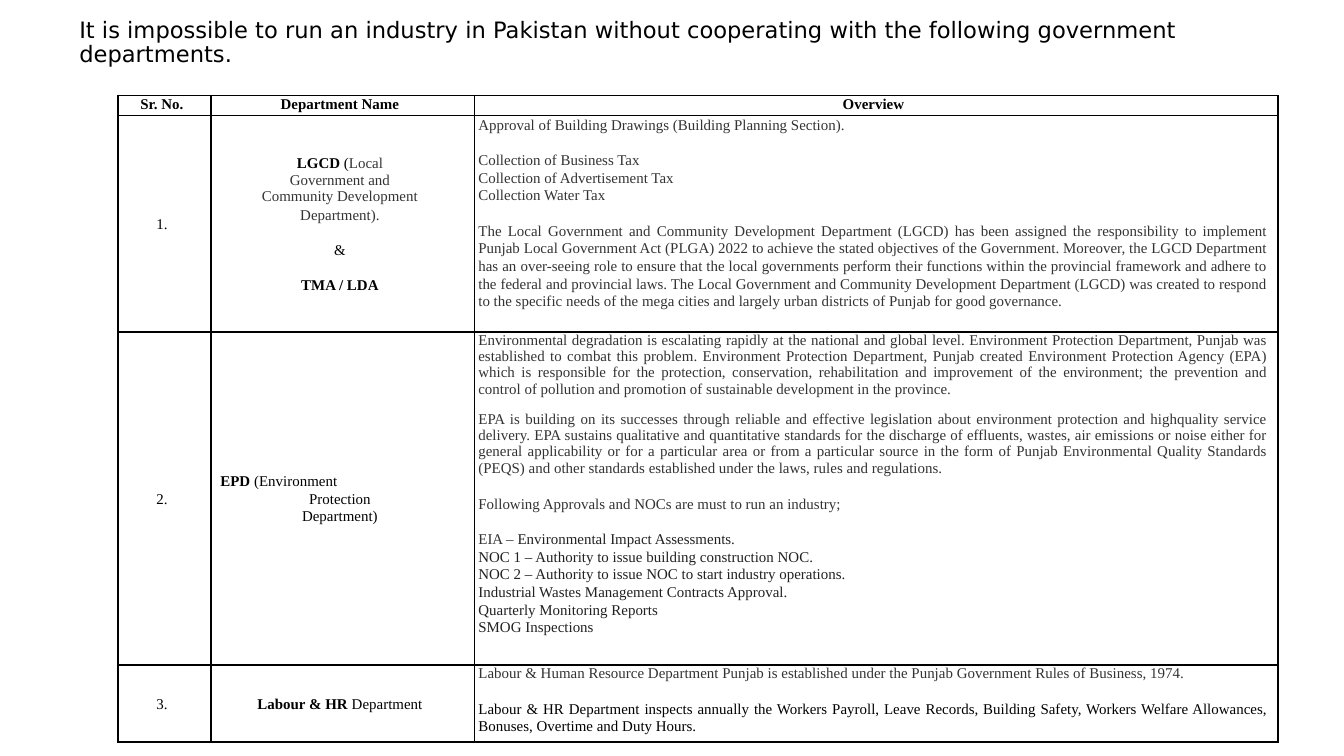
from lxml import etree
from pptx import Presentation
from pptx.dml.color import RGBColor
from pptx.enum.text import MSO_ANCHOR, PP_ALIGN
from pptx.oxml.ns import qn
from pptx.util import Inches, Pt

TOP, MIDDLE = MSO_ANCHOR.TOP, MSO_ANCHOR.MIDDLE
LEFT, CENTER, JUSTIFY = PP_ALIGN.LEFT, PP_ALIGN.CENTER, PP_ALIGN.JUSTIFY
COLORS = {"black": "000000", "white": "FFFFFF", "gray": "333333", "ink": "202124"}
BODY_FONT, BODY_SIZE = "Times New Roman", 8
LINE = 9.5


def para(text, color="black", bold=False, align=CENTER, **spacing):
    runs = [(text, color, bold)] if isinstance(text, str) else text
    return runs, {"alignment": align, "line_spacing": 1.07, **spacing}


def add_border(cell, side):
    line = etree.SubElement(cell._tc.get_or_add_tcPr(), qn(f"a:{side}"), w=str(Pt(1)))
    fill = etree.SubElement(line, qn("a:solidFill"))
    etree.SubElement(fill, qn("a:srgbClr"), val=COLORS["black"])


header = [[para(label, bold=True)] for label in ("Sr. No.", "Department Name", "Overview")]

local_government = [
    [para("1.")],
    [
        para([("LGCD", "black", True), (" (", "black", False), ("Local", "gray", False)]),
        para("Government and", "gray"),
        para("Community Development", "gray", line_spacing=0.98, space_after=Pt(0.2)),
        para("Department).", "gray"),
        para("&", space_before=Pt(LINE)),
        para("TMA / LDA", bold=True, space_before=Pt(LINE)),
    ],
    [
        para("Approval of Building Drawings (Building Planning Section).", "gray", align=LEFT),
        para("Collection of Business Tax", "gray", align=LEFT, space_before=Pt(LINE)),
        para("Collection of Advertisement Tax", "gray", align=LEFT),
        para("Collection Water Tax", "gray", align=LEFT),
        para("The Local Government and Community Development Department (LGCD) has been assigned "
             "the responsibility to implement Punjab Local Government Act (PLGA) 2022 to achieve "
             "the stated objectives of the Government. Moreover, the LGCD Department has an "
             "over-seeing role to ensure that the local governments perform their functions within "
             "the provincial framework and adhere to the federal and provincial laws. The Local "
             "Government and Community Development Department (LGCD) was created to respond to the "
             "specific needs of the mega cities and largely urban districts of Punjab for good "
             "governance.", "gray", align=JUSTIFY, space_before=Pt(LINE)),
    ],
]

environment = [
    [para("2.")],
    [
        para([("EPD", "black", True), (" (Environment", "black", False)], align=LEFT,
             indent=Inches(0.04)),
        para("Protection"),
        para("Department)"),
    ],
    [
        para("Environmental degradation is escalating rapidly at the national and global level. "
             "Environment Protection Department, Punjab was established to combat this problem. "
             "Environment Protection Department, Punjab created Environment Protection Agency "
             "(EPA) which is responsible for the protection, conservation, rehabilitation and "
             "improvement of the environment; the prevention and control of pollution and "
             "promotion of sustainable development in the province.",
             "gray", align=JUSTIFY, line_spacing=0.99, space_after=Pt(7.2)),
        para("EPA is building on its successes through reliable and effective legislation about "
             "environment protection and highquality service delivery. EPA sustains qualitative "
             "and quantitative standards for the discharge of effluents, wastes, air emissions or "
             "noise either for general applicability or for a particular area or from a particular "
             "source in the form of Punjab Environmental Quality Standards (PEQS) and other "
             "standards established under the laws, rules and regulations.",
             "gray", align=JUSTIFY, line_spacing=0.99, space_after=Pt(0.1)),
        para("Following Approvals and NOCs are must to run an industry;", "gray", align=LEFT,
             space_before=Pt(LINE)),
        para([("EIA – ", "gray", False), ("Environmental Impact Assessments.", "ink", False)],
             align=LEFT, space_before=Pt(LINE)),
        *[para(approval, "ink", align=LEFT) for approval in (
            "NOC 1 – Authority to issue building construction NOC.",
            "NOC 2 – Authority to issue NOC to start industry operations.",
            "Industrial Wastes Management Contracts Approval.",
            "Quarterly Monitoring Reports",
            "SMOG Inspections",
        )],
    ],
]

labour = [
    [para("3.")],
    [para([("Labour & HR", "black", True), (" Department", "black", False)])],
    [
        para("Labour & Human Resource Department Punjab is established under the Punjab Government "
             "Rules of Business, 1974.", "gray", align=JUSTIFY, line_spacing=0.98,
             space_after=Pt(0.2)),
        para("Labour & HR Department inspects annually the Workers Payroll, Leave Records, Building "
             "Safety, Workers Welfare Allowances, Bonuses, Overtime and Duty Hours.",
             align=JUSTIFY, space_before=Pt(LINE)),
    ],
]

prs = Presentation()
prs.slide_width = Inches(10)
prs.slide_height = prs.slide_width * 9 // 16
slide = prs.slides.add_slide(prs.slide_layouts[5])

title = slide.shapes.title
title.left, title.top, title.width, title.height = [Inches(v) for v in (0.49, 0.14, 8.62, 0.87)]
title.text_frame.text = ("It is impossible to run an industry in Pakistan without cooperating "
                         "with the following government departments.")
title.text_frame.vertical_anchor = TOP
title.text_frame.margin_top = 0
heading = title.text_frame.paragraphs[0]
heading.alignment, heading.line_spacing = LEFT, 0.9
heading.font.name, heading.font.size = "DejaVu Sans", Pt(12.1)
heading.font.color.rgb = RGBColor.from_string(COLORS["black"])

departments = slide.shapes.add_table(
    4, 3, Inches(0.88), Inches(0.71), Inches(8.63), Inches(4.81)).table
departments.first_row = departments.horz_banding = False
for column, width in zip(departments.columns, (0.69, 1.96, 5.98)):
    column.width = Inches(width)
for row, height in zip(departments.rows, (0.15, 1.61, 2.48, 0.57)):
    row.height = Inches(height)

cell_format = {"margin_left": Inches(0.03), "margin_right": Inches(0.07),
               "margin_top": 0, "margin_bottom": 0}
for r, row_content in enumerate((header, local_government, environment, labour)):
    for c, paragraphs in enumerate(row_content):
        cell = departments.cell(r, c)
        for name, value in cell_format.items():
            setattr(cell, name, value)
        cell.vertical_anchor = MIDDLE if r > 0 and c < 2 else TOP
        for side in ("lnL", "lnR", "lnT", "lnB"):
            add_border(cell, side)
        cell.fill.solid()
        cell.fill.fore_color.rgb = RGBColor.from_string(COLORS["white"])
        for i, (runs, spacing) in enumerate(paragraphs):
            frame = cell.text_frame
            paragraph = frame.paragraphs[0] if i == 0 else frame.add_paragraph()
            for name, value in spacing.items():
                if name == "indent":
                    paragraph._p.get_or_add_pPr().set("marL", str(value))
                else:
                    setattr(paragraph, name, value)
            for text, color, bold in runs:
                run = paragraph.add_run()
                run.text = text
                run.font.name, run.font.size, run.font.bold = BODY_FONT, Pt(BODY_SIZE), bold
                run.font.color.rgb = RGBColor.from_string(COLORS[color])

prs.save("out.pptx")
